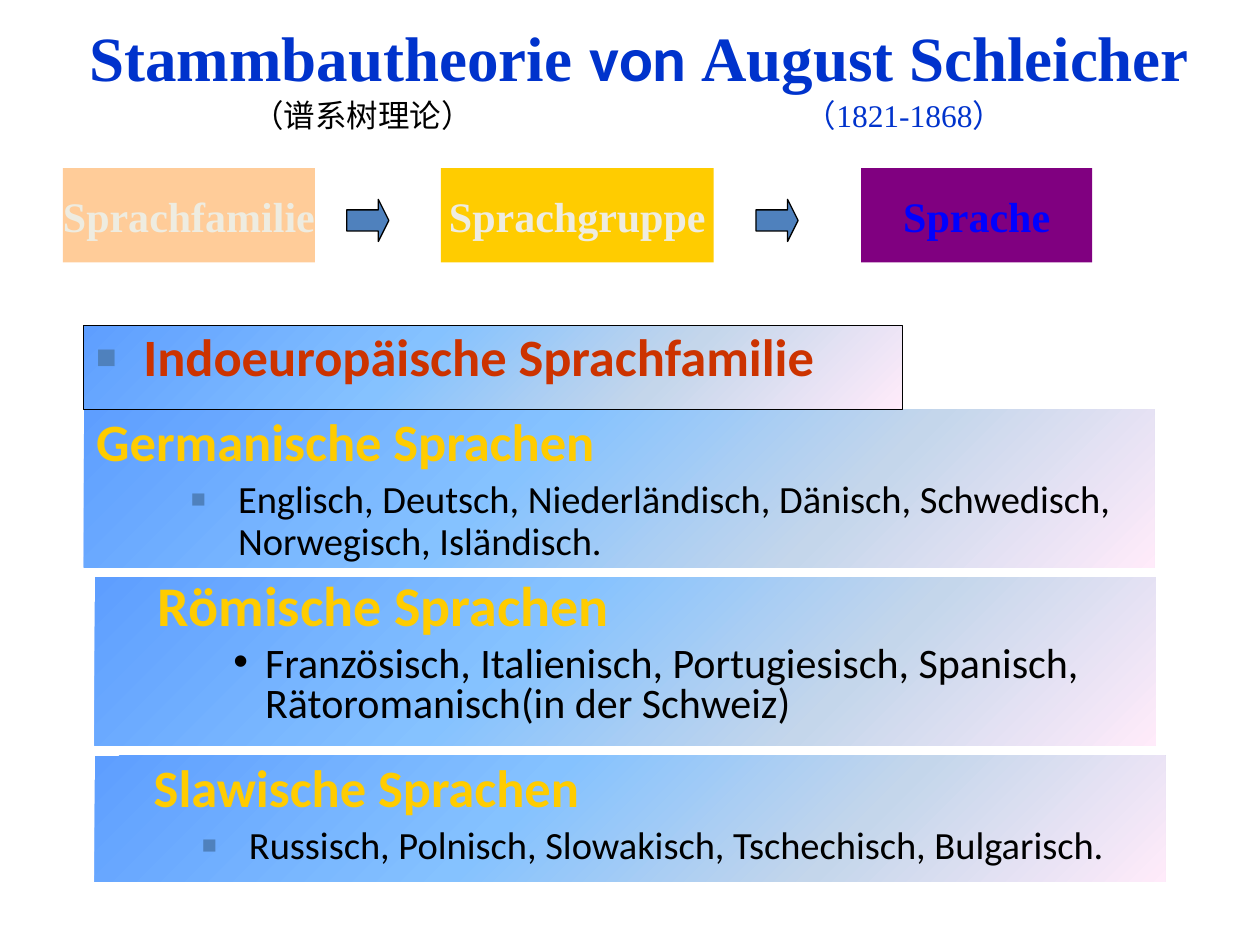
from dataclasses import dataclass
from typing import Optional

from lxml.etree import SubElement
from pptx import Presentation
from pptx.dml.color import RGBColor
from pptx.enum.shapes import MSO_SHAPE as Preset
from pptx.enum.text import MSO_ANCHOR as Anchor, MSO_AUTO_SIZE as AutoSize, PP_ALIGN as Align
from pptx.oxml.ns import qn
from pptx.util import Cm, Pt

COLORS = {
    "title": "0033CC",
    "black": "000000",
    "heading": "FFCC00",
    "family": "CC3300",
    "accent": "4F81BD",
    "pale": "EEECE1",
    "peach": "FFCC99",
    "purple": "800080",
    "blue": "0000FF",
}
GRADIENT = [(0, "5E9EFF"), (40, "85C2FF"), (70, "C4D6EB"), (100, "FFEBFA")]
SERIF, SANS = "Times New Roman", "Calibri"


@dataclass
class Stage:
    text: str
    left: float
    width: float
    fill: str
    color: str


@dataclass
class Line:
    text: str
    size: float
    color: str
    bold: bool = False
    margin: float = 0
    hanging: float = 0
    bullet: Optional[str] = None
    level: int = 0


@dataclass
class Panel:
    left: float
    top: float
    width: float
    height: float
    lines: list[Line]
    spacing: float = 0.9
    outlined: bool = False
    is_body: bool = False


def rgb(name: str) -> RGBColor:
    return RGBColor.from_string(COLORS[name])


def place(shape, left: float, top: float, width: float, height: float) -> None:
    shape.left, shape.top = Cm(left), Cm(top)
    shape.width, shape.height = Cm(width), Cm(height)


def add_text(para, text: str, size: float, font: str, color: str, bold: bool = False) -> None:
    run = para.add_run()
    run.text = text
    run.font.size = Pt(size)
    run.font.name = font
    run.font.bold = bold
    run.font.color.rgb = rgb(color)


def add_preset(page, preset, left: float, top: float, width: float, height: float):
    shape = page.shapes.add_shape(preset, Cm(left), Cm(top), Cm(width), Cm(height))
    shape.shadow.inherit = False
    shape.line.fill.background()
    return shape


def outline(shape) -> None:
    shape.line.color.rgb = rgb("black")
    shape.line.width = Pt(0.75)


def fill_gradient(shape) -> None:
    shape.fill.gradient()
    shape.fill.gradient_angle = 315
    stops = shape.element.spPr.find(f".//{qn('a:gsLst')}")
    for stop in list(stops):
        stops.remove(stop)
    for position, color in GRADIENT:
        stop = SubElement(stops, qn("a:gs"), pos=str(position * 1000))
        SubElement(stop, qn("a:srgbClr"), val=color)


def set_bullet(para, line: Line) -> None:
    props = para._p.get_or_add_pPr()
    props.set("marL", str(Cm(line.margin)))
    props.set("indent", str(-Cm(line.hanging)))
    if line.bullet is None:
        SubElement(props, qn("a:buNone"))
        return
    if line.bullet == "■":
        color = SubElement(props, qn("a:buClr"))
        SubElement(color, qn("a:srgbClr"), val=COLORS["accent"])
        SubElement(props, qn("a:buSzPct"), val="65000")
    SubElement(props, qn("a:buFont"), typeface="Arial")
    SubElement(props, qn("a:buChar"), char=line.bullet)


def draw_title(page) -> None:
    title = page.shapes.title
    place(title, 1.27, 1.12, 23.24, 1.7)
    frame = title.text_frame
    frame.auto_size = AutoSize.NONE
    frame.vertical_anchor = Anchor.BOTTOM
    para = frame.paragraphs[0]
    para.alignment = Align.CENTER
    add_text(para, "Stammbautheorie", 36, SERIF, "title", True)
    add_text(para, " ", 40, SERIF, "title", True)
    add_text(para, "von ", 36, SANS, "title", True)
    add_text(para, "August Schleicher", 36, SERIF, "title", True)
    para = frame.add_paragraph()
    para.alignment = Align.LEFT
    tabs = SubElement(para._p.get_or_add_pPr(), qn("a:tabLst"))
    for position in (3.56, 14.7):
        SubElement(tabs, qn("a:tab"), pos=str(Cm(position)), algn="l")
    add_text(para, "\t（谱系树理论）", 18, SANS, "black")
    add_text(para, "\t（1821-1868）", 18, SERIF, "title")


def draw_stage(page, stage: Stage) -> None:
    box = add_preset(page, Preset.RECTANGLE, stage.left, 3.39, stage.width, 1.9)
    box.fill.solid()
    box.fill.fore_color.rgb = rgb(stage.fill)
    frame = box.text_frame
    frame.word_wrap = False
    frame.vertical_anchor = Anchor.MIDDLE
    para = frame.paragraphs[0]
    para.alignment = Align.CENTER
    add_text(para, stage.text, 24, SERIF, stage.color, True)


def draw_arrow(page, left: float) -> None:
    arrow = add_preset(page, Preset.RIGHT_ARROW, left, 4.02, 0.85, 0.85)
    arrow.adjustments[1] = 0.25
    arrow.fill.solid()
    arrow.fill.fore_color.rgb = rgb("accent")
    outline(arrow)


def draw_panel(page, panel: Panel) -> None:
    bounds = (panel.left, panel.top, panel.width, panel.height)
    if panel.is_body:
        box = page.placeholders[1]
        place(box, *bounds)
    else:
        box = add_preset(page, Preset.RECTANGLE, *bounds)
    fill_gradient(box)
    if panel.outlined:
        outline(box)
    frame = box.text_frame
    frame.word_wrap = True
    frame.auto_size = AutoSize.NONE
    frame.vertical_anchor = Anchor.TOP
    for index, line in enumerate(panel.lines):
        para = frame.add_paragraph() if index else frame.paragraphs[0]
        para.level = line.level
        para.alignment = Align.LEFT
        para.line_spacing = panel.spacing
        para.space_before = Pt(line.size * 0.2)
        set_bullet(para, line)
        add_text(para, line.text, line.size, SANS, line.color, line.bold)


STAGES = [
    Stage("Sprachfamilie", 1.27, 5.08, "peach", "pale"),
    Stage("Sprachgruppe", 8.89, 5.5, "heading", "pale"),
    Stage("Sprache", 17.36, 4.66, "purple", "blue"),
]
PANELS = [
    Panel(1.91, 11.64, 21.39, 3.39, [
        Line("Römische Sprachen", 32, "heading", True, margin=1.02),
        Line("Französisch, Italienisch, Portugiesisch, Spanisch, Rätoromanisch(in der Schweiz)",
             24, "black", False, 3.18, 0.64, "•", 2),
    ], spacing=0.8, is_body=True),
    Panel(1.69, 8.26, 21.59, 3.18, [
        Line("Germanische Sprachen", 30, "heading", True),
        Line("Englisch, Deutsch, Niederländisch, Dänisch, Schwedisch, Norwegisch, Isländisch.",
             22, "black", False, 2.86, 0.95, "■", 2),
    ]),
    Panel(1.91, 15.24, 21.59, 2.54, [
        Line("Slawische Sprachen", 30, "heading", True, margin=0.94, level=1),
        Line("Russisch, Polnisch, Slowakisch, Tschechisch, Bulgarisch.",
             22, "black", False, 2.86, 0.95, "■", 2),
    ]),
    Panel(1.69, 6.56, 16.51, 1.7, [
        Line("Indoeuropäische Sprachfamilie", 30, "family", True, 0.95, 0.95, "■"),
    ], outlined=True),
]

deck = Presentation()
deck.slide_width, deck.slide_height = Cm(25.4), Cm(19.05)
page = deck.slides.add_slide(deck.slide_layouts[1])
draw_title(page)
for stage in STAGES:
    draw_stage(page, stage)
for arrow_left in (6.99, 15.24):
    draw_arrow(page, arrow_left)
for panel in PANELS:
    draw_panel(page, panel)
deck.save("out.pptx")
